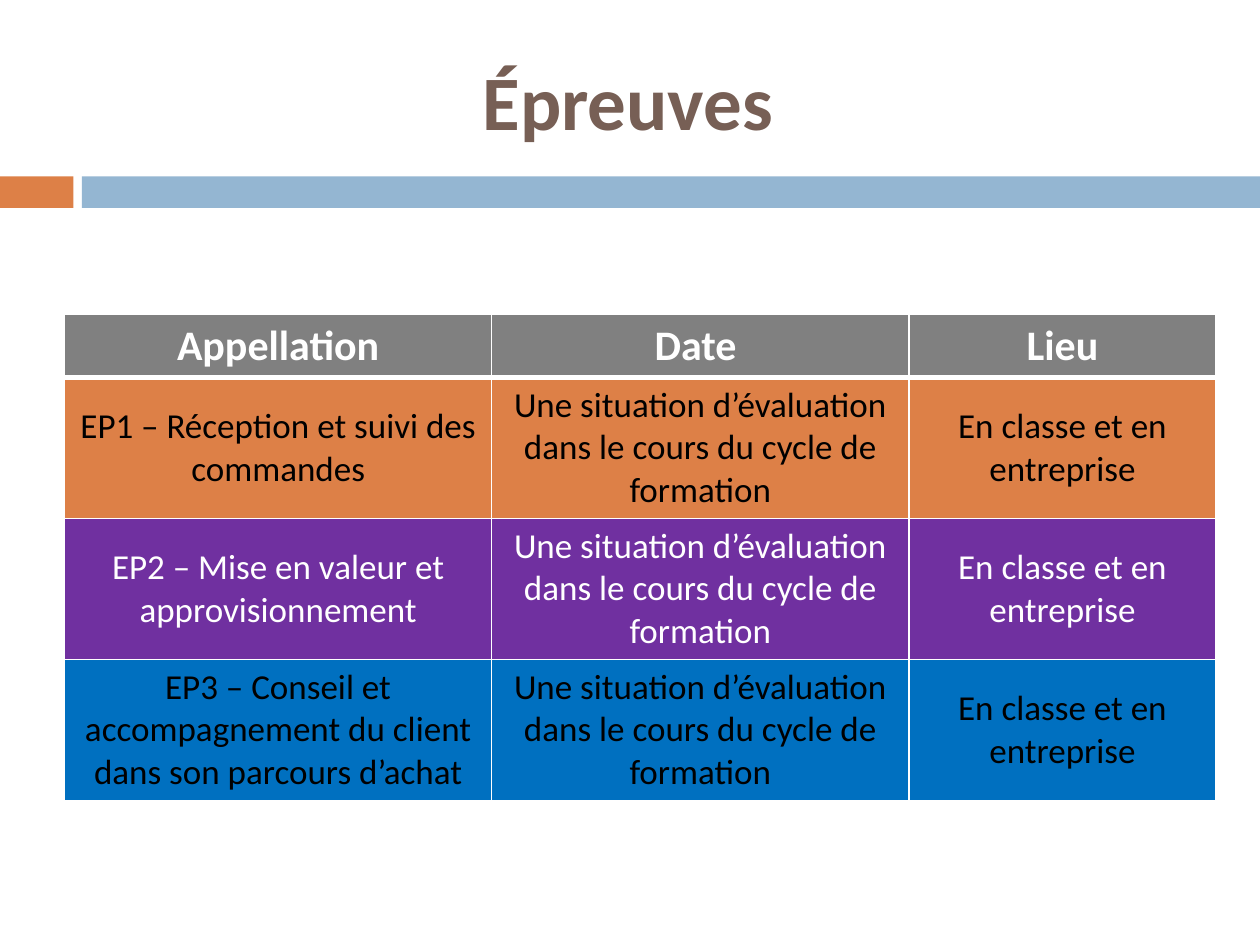
from lxml import etree
from pptx import Presentation
from pptx.dml.color import RGBColor
from pptx.enum import shapes, text
from pptx.oxml import ns
from pptx.util import Pt

FONT = "Calibri"
HUES = {
    "title": "775F55",
    "orange": "DD8047",
    "sky": "94B6D2",
    "gray": "808080",
    "purple": "7030A0",
    "blue": "0070C0",
    "white": "FFFFFF",
    "black": "000000",
}
DATE = "Une situation d’évaluation dans le cours du cycle de formation"
PLACE = "En classe et en entreprise"
ROWS = [
    ("gray", "white", ("Appellation", "Date ", "Lieu")),
    ("orange", "black", ("EP1 – Réception et suivi des commandes", DATE, PLACE)),
    ("purple", "white", ("EP2 – Mise en valeur et approvisionnement", DATE, PLACE)),
    ("blue", "black",
     ("EP3 – Conseil et accompagnement du client dans son parcours d’achat", DATE, PLACE)),
]
WIDTHS = (244, 238.4, 175.6)
HEAD, BODY = 35.6, 80.6


def paint(fill, hue):
    fill.solid()
    fill.fore_color.rgb = RGBColor.from_string(HUES[hue])


def write(frame, words, size, hue, bold):
    frame.text = words
    para = frame.paragraphs[0]
    para.alignment = text.PP_ALIGN.CENTER
    font = para.runs[0].font
    font.name, font.size, font.bold = FONT, Pt(size), bold
    font.color.rgb = RGBColor.from_string(HUES[hue])


def edge(cell, side, width):
    props = cell._tc.get_or_add_tcPr()
    line = etree.SubElement(props, ns.qn(f"a:ln{side}"), w=str(Pt(width)))
    fill = etree.SubElement(line, ns.qn("a:solidFill"))
    etree.SubElement(fill, ns.qn("a:srgbClr"), val=HUES["white"])


def add_title(slide, left, top, width, height):
    box = slide.shapes.add_textbox(Pt(left), Pt(top), Pt(width), Pt(height))
    frame = box.text_frame
    frame.word_wrap = True
    frame.vertical_anchor = text.MSO_ANCHOR.MIDDLE
    frame.margin_right = Pt(27.2)
    write(frame, "Épreuves", 44, "title", True)


def add_band(slide, left, top, width, height):
    tab, gap = 42, 4.8
    start = tab + gap
    for hue, shift, span in (("orange", 0, tab), ("sky", start, width - start)):
        bar = slide.shapes.add_shape(
            shapes.MSO_SHAPE.RECTANGLE, Pt(left + shift), Pt(top), Pt(span), Pt(height))
        bar.shadow.inherit = False
        paint(bar.fill, hue)
        bar.line.fill.background()


def add_grid(slide, left, top, width, height):
    frame = slide.shapes.add_table(
        len(ROWS), len(WIDTHS), Pt(left), Pt(top), Pt(width), Pt(height))
    table = frame.table
    for column, span in zip(table.columns, WIDTHS):
        column.width = Pt(span)
    for i, (back, ink, words) in enumerate(ROWS):
        first = i == 0
        table.rows[i].height = Pt(HEAD if first else BODY)
        for j, word in enumerate(words):
            cell = table.cell(i, j)
            cell.vertical_anchor = text.MSO_ANCHOR.MIDDLE
            write(cell.text_frame, word, 24 if first else 20, ink, first)
            for side in "LRTB":
                thick = (first and side == "B") or (i == 1 and side == "T")
                edge(cell, side, 3 if thick else 1)
            paint(cell.fill, back)


def main():
    deck = Presentation()
    deck.slide_width, deck.slide_height = Pt(720), Pt(540)
    slide = deck.slides.add_slide(deck.slide_layouts[6])
    add_band(slide, 0, 100.8, 720, 18)
    add_title(slide, 48, 18, 642, 78)
    add_grid(slide, 37, 179.6, sum(WIDTHS), HEAD + 3 * BODY)
    deck.save("out.pptx")


if __name__ == "__main__":
    main()
